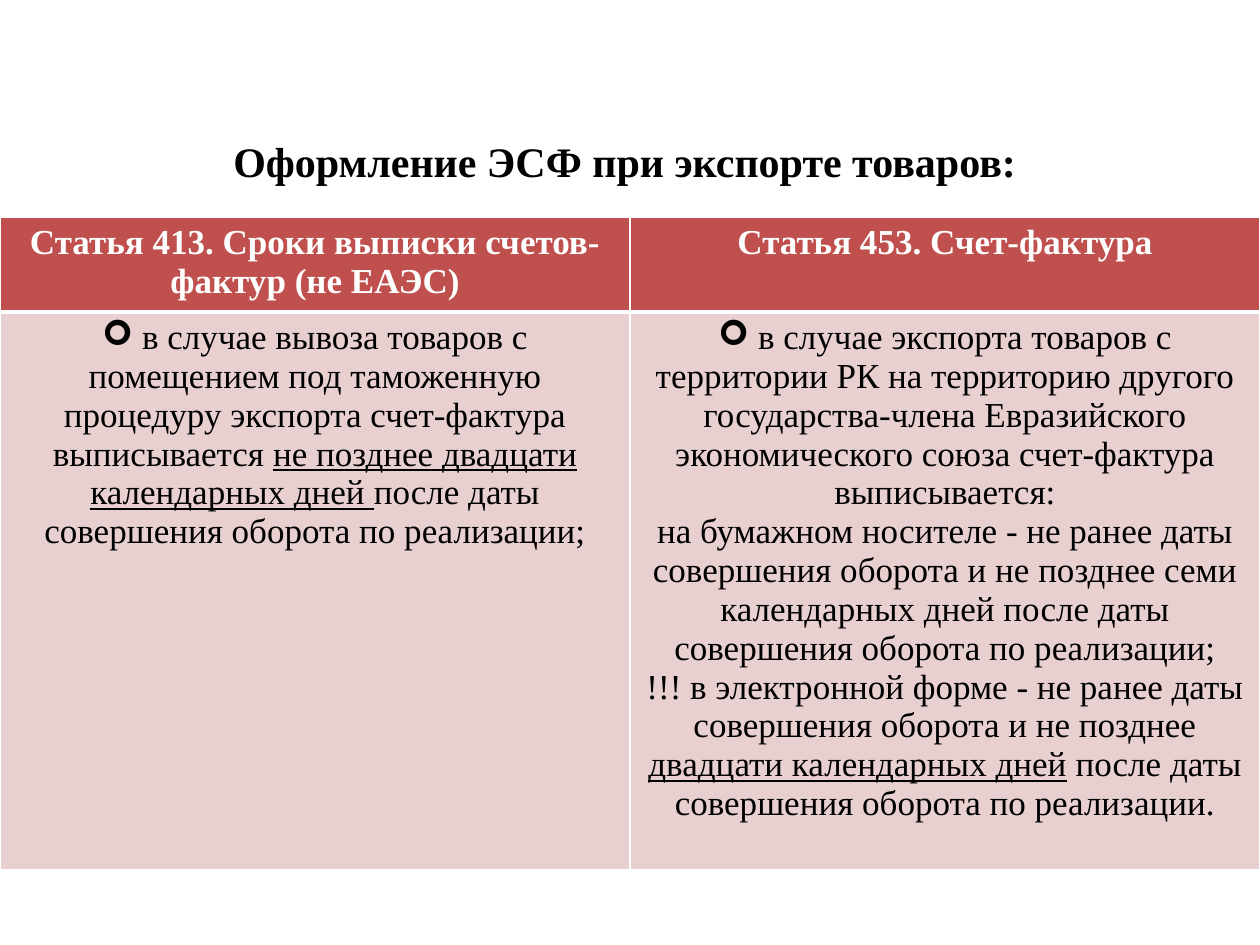
from dataclasses import dataclass

from lxml.etree import SubElement
from pptx import Presentation
from pptx.dml.color import RGBColor
from pptx.enum.text import MSO_ANCHOR, MSO_AUTO_SIZE, PP_ALIGN
from pptx.oxml.ns import qn
from pptx.util import Inches, Pt


@dataclass(frozen=True)
class Theme:
    font: str = "Times New Roman"
    title_size: int = 24
    table_size: int = 20
    ink: str = "000000"
    paper: str = "FFFFFF"
    header: str = "C0504D"
    body: str = "E8D0D0"
    thin_rule: int = 1
    thick_rule: int = 3


TITLE = "Оформление ЭСФ при экспорте товаров: "
HEADINGS = [
    "Статья\u00a0413. Сроки выписки счетов-фактур (не ЕАЭС)",
    "Статья\u00a0453. Счет-фактура",
]
# Each article is a list of paragraphs; every second piece of a paragraph is underlined.
ARTICLES = [
    [
        [
            " в случае вывоза товаров с помещением под таможенную процедуру "
            "экспорта счет-фактура выписывается ",
            "не позднее двадцати календарных дней ",
            "после даты совершения оборота по реализации;",
        ],
    ],
    [
        [
            " в случае экспорта товаров с территории РК на территорию другого "
            "государства-члена Евразийского экономического союза счет-фактура "
            "выписывается:",
        ],
        [
            "на бумажном носителе - не ранее даты совершения оборота и не позднее "
            "семи календарных дней после даты совершения оборота по реализации;",
        ],
        [
            "!!! в электронной форме - не ранее даты совершения оборота и не позднее ",
            "двадцати календарных дней",
            " после даты совершения оборота по реализации.",
        ],
    ],
]


class SlideBuilder:
    def __init__(self, deck, theme):
        self.theme = theme
        self.width, self.height = deck.slide_width, deck.slide_height
        self.slide = deck.slides.add_slide(deck.slide_layouts[5])

    def box(self, left, top, width, height):
        """Turn shares of the slide's size into lengths."""
        return (int(left * self.width), int(top * self.height),
                int(width * self.width), int(height * self.height))

    def style(self, run, size, color, bold=False, underline=False):
        font = run.font
        font.name, font.size = self.theme.font, Pt(size)
        font.bold, font.underline = bold, underline
        font.color.rgb = RGBColor.from_string(color)

    def title(self, text, *shares):
        heading = self.slide.shapes.title
        heading.left, heading.top, heading.width, heading.height = self.box(*shares)
        frame = heading.text_frame
        frame.text = text
        frame.auto_size = MSO_AUTO_SIZE.NONE
        frame.vertical_anchor = MSO_ANCHOR.MIDDLE
        paragraph = frame.paragraphs[0]
        paragraph.alignment = PP_ALIGN.CENTER
        self.style(paragraph.runs[0], self.theme.title_size, self.theme.ink, bold=True)

    def finish_cell(self, cell, fill, top, bottom):
        """Draw the cell's borders and fill."""
        properties = cell._tc.get_or_add_tcPr()
        thin = self.theme.thin_rule
        for side, points in zip("LRTB", (thin, thin, top, bottom)):
            line = SubElement(properties, qn(f"a:ln{side}"), w=str(Pt(points)))
            solid = SubElement(line, qn("a:solidFill"))
            SubElement(solid, qn("a:srgbClr"), val=self.theme.paper)
        cell.fill.solid()
        cell.fill.fore_color.rgb = RGBColor.from_string(fill)

    def write_cell(self, cell, paragraphs, color, bold=False, bullet=None):
        """Write the paragraphs, the first one with the bullet."""
        frame = cell.text_frame
        for index, pieces in enumerate(paragraphs):
            paragraph = frame.add_paragraph() if index else frame.paragraphs[0]
            paragraph.alignment = PP_ALIGN.CENTER
            if bullet and index == 0:
                properties = paragraph._p.get_or_add_pPr()
                SubElement(properties, qn("a:buFont"), typeface="Wingdings")
                SubElement(properties, qn("a:buChar"), char=bullet)
            for place, piece in enumerate(pieces):
                run = paragraph.add_run()
                run.text = piece
                self.style(run, self.theme.table_size, color, bold, place % 2 == 1)

    def table(self, headings, articles, row_shares, *shares):
        theme = self.theme
        grid = self.slide.shapes.add_table(2, len(headings), *self.box(*shares)).table
        for row, share in zip(grid.rows, row_shares):
            row.height = int(share * self.height)
        for column, (heading, article) in enumerate(zip(headings, articles)):
            top, bottom = grid.cell(0, column), grid.cell(1, column)
            self.finish_cell(top, theme.header, theme.thin_rule, theme.thick_rule)
            self.finish_cell(bottom, theme.body, theme.thick_rule, theme.thin_rule)
            self.write_cell(top, [[heading]], theme.paper, bold=True)
            self.write_cell(bottom, article, theme.ink, bullet="➢")


def main():
    deck = Presentation()
    deck.slide_width, deck.slide_height = Inches(10), Inches(7.5)
    builder = SlideBuilder(deck, Theme())
    builder.title(TITLE, 0, 0.15, 1, 0.04)
    builder.table(HEADINGS, ARTICLES, (0.1, 0.59), 0, 0.23, 1, 0.69)
    deck.save("out.pptx")


if __name__ == "__main__":
    main()
